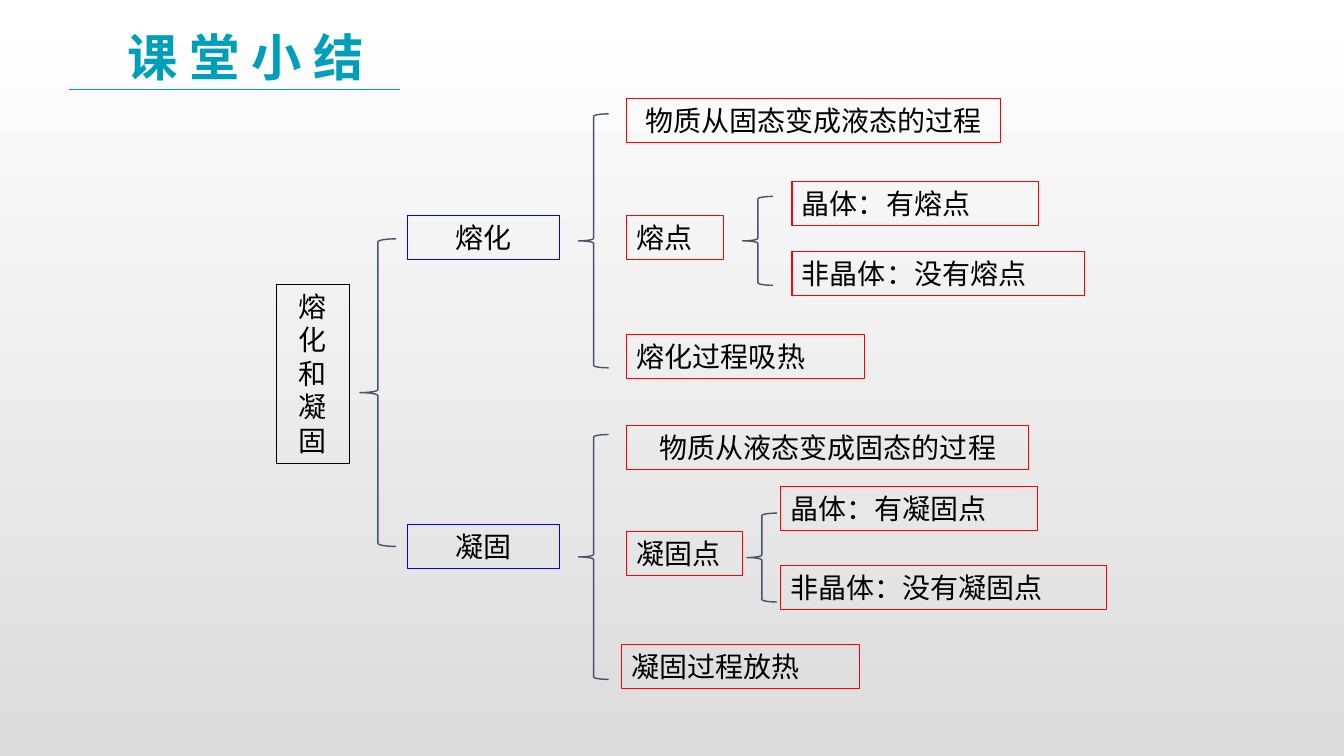
import lxml.etree
import pptx
import pptx.util
import pptx.dml.color
import pptx.enum.shapes
import pptx.enum.text
import pptx.oxml.ns

Cm, Pt = pptx.util.Cm, pptx.util.Pt
RGBColor = pptx.dml.color.RGBColor
SHAPE = pptx.enum.shapes.MSO_SHAPE
ALIGN = pptx.enum.text.PP_ALIGN
qn = pptx.oxml.ns.qn

FONT = "Noto Sans CJK SC"
WHITE = RGBColor(0xFF, 0xFF, 0xFF)
GREY = RGBColor(0xDC, 0xDC, 0xDC)
BLACK = RGBColor(0, 0, 0)
BLUE = RGBColor(0, 0, 0xFF)
RED = RGBColor(0xFF, 0, 0)
SLATE = RGBColor(0x44, 0x54, 0x6A)
TEAL = RGBColor(0, 0x9F, 0xB9)


def write_text(shape, text, size, color, align, bold=False):
    frame = shape.text_frame
    frame.text = text
    frame.word_wrap = True
    frame.vertical_anchor = pptx.enum.text.MSO_ANCHOR.TOP
    frame.auto_size = pptx.enum.text.MSO_AUTO_SIZE.SHAPE_TO_FIT_TEXT
    para = frame.paragraphs[0]
    para.alignment = align
    para.font.name = FONT
    para.font.size = Pt(size)
    para.font.bold = bold
    para.font.color.rgb = color
    # East Asian typeface, placed right after the Latin one
    properties = para._p.pPr.find(qn("a:defRPr"))
    lxml.etree.SubElement(properties, qn("a:ea"), typeface=FONT)


def add_outline(kind, left, top, width, height, color, weight):
    shape = slide.shapes.add_shape(kind, Cm(left), Cm(top), Cm(width), Cm(height))
    shape.shadow.inherit = False
    shape.fill.background()
    shape.line.color.rgb = color
    shape.line.width = Pt(weight)
    return shape


deck = pptx.Presentation()
deck.slide_width, deck.slide_height = Cm(33.87), Cm(19.05)
slide = deck.slides.add_slide(deck.slide_layouts[5])

# Background fading downwards from white to grey
background = slide.background.fill
background.gradient()
background.gradient_angle = 270
for stop, color in zip(background.gradient_stops, (WHITE, GREY)):
    stop.color.rgb = color

# Boxes of the concept tree
ROW = 1.11
boxes = [
    ("熔化和凝固", 6.96, 7.16, 1.85, 4.52, BLACK, ALIGN.CENTER),
    ("熔化", 10.26, 5.43, 3.84, ROW, BLUE, ALIGN.CENTER),
    ("凝固", 10.26, 13.21, 3.84, ROW, BLUE, ALIGN.CENTER),
    ("物质从固态变成液态的过程", 15.8, 2.49, 9.42, ROW, RED, ALIGN.CENTER),
    ("熔点", 15.8, 5.42, 2.44, ROW, RED, ALIGN.LEFT),
    ("晶体：有熔点", 19.96, 4.57, 6.22, ROW, RED, ALIGN.LEFT),
    ("非晶体：没有熔点", 19.96, 6.33, 7.37, ROW, RED, ALIGN.LEFT),
    ("熔化过程吸热", 15.8, 8.43, 6, ROW, RED, ALIGN.LEFT),
    ("物质从液态变成固态的过程", 15.8, 10.72, 10.13, ROW, RED, ALIGN.CENTER),
    ("凝固点", 15.8, 13.4, 2.92, ROW, RED, ALIGN.LEFT),
    ("晶体：有凝固点", 19.66, 12.26, 6.5, ROW, RED, ALIGN.LEFT),
    ("非晶体：没有凝固点", 19.66, 14.25, 8.23, ROW, RED, ALIGN.LEFT),
    ("凝固过程放热", 15.67, 16.25, 6, ROW, RED, ALIGN.LEFT),
]
for text, left, top, width, height, color, align in boxes:
    box = add_outline(SHAPE.RECTANGLE, left, top, width, height, color, 0.75)
    write_text(box, text, 20, BLACK, align)

# Braces joining each box to its branches
braces = [
    (9.07, 6.02, 0.91, 7.75),
    (14.58, 2.87, 0.76, 6.4),
    (14.58, 10.95, 0.76, 6.17),
    (18.72, 4.95, 0.76, 2.24),
    (18.82, 12.93, 0.76, 2.24),
]
for left, top, width, height in braces:
    add_outline(SHAPE.LEFT_BRACE, left, top, width, height, SLATE, 1)

# Title and its underline
title = slide.shapes.title
title.left, title.top, title.width, title.height = Cm(2.97), Cm(0.53), Cm(7.52), Cm(1.8)
write_text(title, "课 堂 小 结", 36, TEAL, ALIGN.LEFT, bold=True)

underline = slide.shapes.add_connector(
    pptx.enum.shapes.MSO_CONNECTOR.STRAIGHT, Cm(1.73), Cm(2.25), Cm(10.08), Cm(2.25))
underline.line.color.rgb = TEAL
underline.line.width = Pt(0.5)
lxml.etree.SubElement(underline._element.spPr, qn("a:effectLst"))

deck.save("out.pptx")
